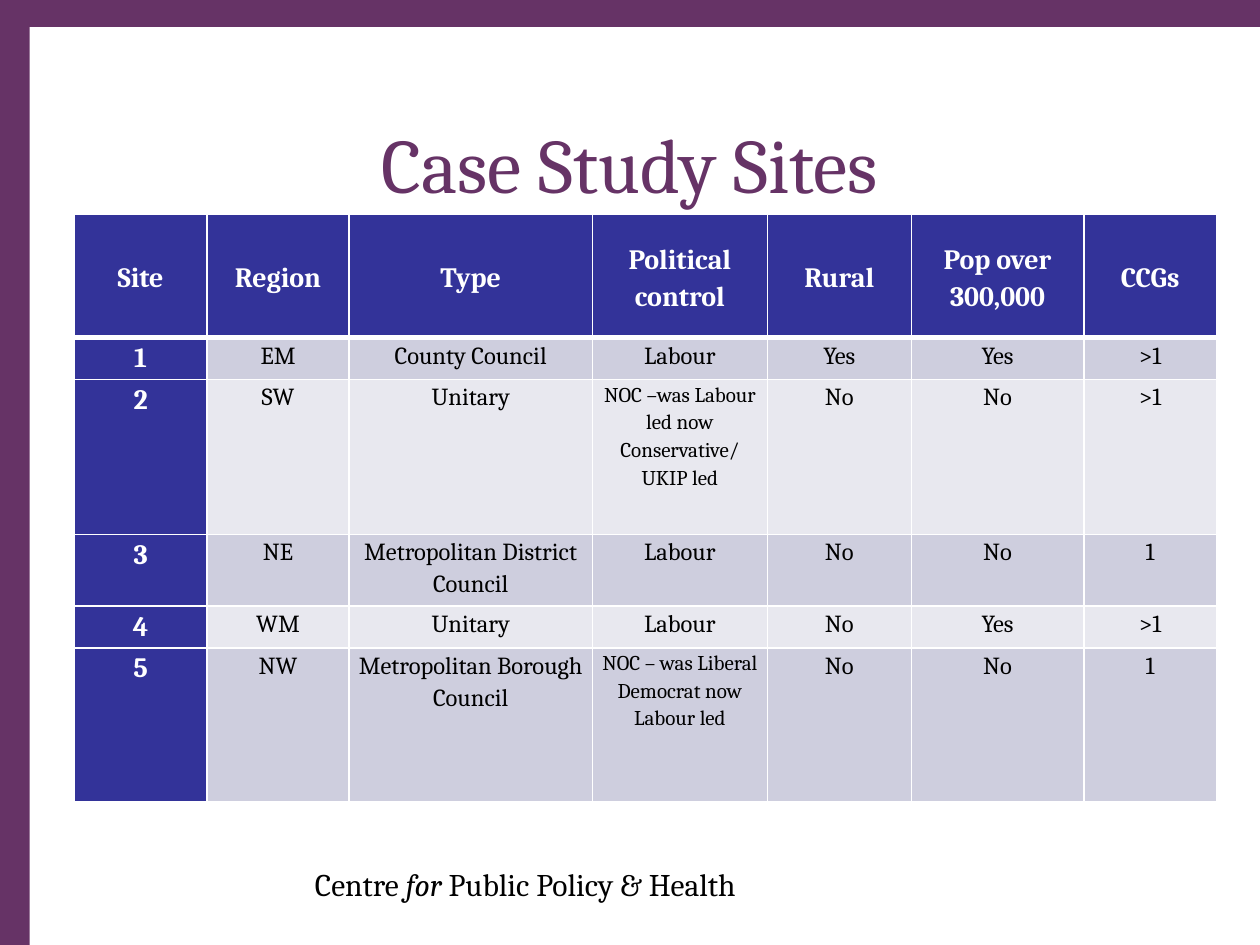
"""Build the Case Study Sites slide with its table of five sites."""
from lxml import etree
from pptx import Presentation
from pptx.dml.color import RGBColor
from pptx.enum.shapes import MSO_SHAPE
from pptx.enum.text import MSO_ANCHOR, PP_ALIGN
from pptx.oxml.ns import qn
from pptx.util import Cm, Pt

RECT = MSO_SHAPE.RECTANGLE
TOP, MIDDLE = MSO_ANCHOR.TOP, MSO_ANCHOR.MIDDLE
LEFT, CENTER = PP_ALIGN.LEFT, PP_ALIGN.CENTER
FONT = "Cambria"
PURPLE, BLUE, WHITE, BLACK = "663366", "333399", "FFFFFF", "000000"
BANDS = ("CECEDE", "E8E8EF")

TITLE = "Case Study Sites"
FOOTER = (("Centre ", False), ("for", True), (" Public Policy & Health", False))
HEADER = ("Site", "Region", "Type", "Political control", "Rural",
          "Pop over 300,000", "CCGs")
SITES = [
    ("1", "EM", "County Council", "Labour", "Yes", "Yes", ">1"),
    ("2", "SW", "Unitary",
     "NOC –was Labour led now Conservative/\nUKIP led", "No", "No", ">1"),
    ("3", "NE", "Metropolitan District Council", "Labour", "No", "No", "1"),
    ("4", "WM", "Unitary", "Labour", "No", "Yes", ">1"),
    ("5", "NW", "Metropolitan Borough Council",
     "NOC – was Liberal Democrat now Labour led", "No", "No", "1"),
]
COL_WIDTHS = (2.67, 2.87, 4.9, 3.53, 2.9, 3.48, 2.67)
ROW_HEIGHTS = (2.49, 0.84, 3.12, 1.45, 0.84, 3.1)


def rgb(color):
    return RGBColor.from_string(color)


def add_text(p, text, size=14, color=BLACK, bold=False, italic=False,
             align=CENTER, spacing=None):
    p.alignment = align
    p.line_spacing = spacing
    r = p.add_run()
    r.text = text
    f = r.font
    f.name, f.size, f.bold, f.italic = FONT, Pt(size), bold, italic
    f.color.rgb = rgb(color)


def add_rect(s, color, x, y, w, h):
    sp = s.shapes.add_shape(RECT, x, y, w, h)
    sp.shadow.inherit = False
    sp.fill.solid()
    sp.fill.fore_color.rgb = rgb(color)
    sp.line.fill.background()


def add_box(s, x, y, w, h):
    tf = s.shapes.add_textbox(Cm(x), Cm(y), Cm(w), Cm(h)).text_frame
    tf.word_wrap = True
    tf.vertical_anchor = MIDDLE
    return tf.paragraphs[0]


def set_borders(cell, **widths):
    tc_pr = cell._tc.get_or_add_tcPr()
    for side in "LRTB":
        ln = etree.SubElement(tc_pr, qn(f"a:ln{side}"),
                              w=str(Pt(widths.get(side, 1))))
        fill = etree.SubElement(ln, qn("a:solidFill"))
        etree.SubElement(fill, qn("a:srgbClr"), val=WHITE)


def fill_cell(cell, text, row, col):
    head = row == 0 or col == 0
    size = 16 if head else 12 if text.startswith("NOC") else 14
    set_borders(cell, T=3 if row == 1 else 1, B=3 if row == 0 else 1)
    cell.fill.solid()
    cell.fill.fore_color.rgb = rgb(BLUE if head else BANDS[(row - 1) % 2])
    cell.margin_left = cell.margin_right = Cm(0.18)
    cell.margin_top = cell.margin_bottom = 0
    cell.vertical_anchor = MIDDLE if row == 0 else TOP
    tf = cell.text_frame
    for i, line in enumerate(text.split("\n")):
        p = tf.add_paragraph() if i else tf.paragraphs[0]
        add_text(p, line, size=size, color=WHITE if head else BLACK,
                 bold=head, spacing=1.15)


def add_site_table(s, x, y):
    rows = [HEADER, *SITES]
    table = s.shapes.add_table(len(rows), len(HEADER), Cm(x), Cm(y),
                               Cm(sum(COL_WIDTHS)), Cm(sum(ROW_HEIGHTS))).table
    for column, width in zip(table.columns, COL_WIDTHS):
        column.width = Cm(width)
    for row, height in zip(table.rows, ROW_HEIGHTS):
        row.height = Cm(height)
    for i, texts in enumerate(rows):
        for j, text in enumerate(texts):
            fill_cell(table.cell(i, j), text, i, j)


def main():
    prs = Presentation()
    prs.slide_width, prs.slide_height = Cm(25.4), Cm(19.05)
    s = prs.slides.add_slide(prs.slide_layouts[6])
    w, h = prs.slide_width, prs.slide_height
    left, top = Cm(0.6), Cm(0.55)
    add_rect(s, PURPLE, 0, 0, w, h)
    add_rect(s, WHITE, left, top, w - left, h - top)
    p = add_box(s, 6.1, 16.4, 11, 2.82)
    for text, italic in FOOTER:
        add_text(p, text, size=18, italic=italic, align=LEFT)
    add_text(add_box(s, 1.9, 1.7, 21.6, 3.18), TITLE, size=44, color=PURPLE)
    add_site_table(s, 1.5, 4.32)
    prs.save("out.pptx")


if __name__ == "__main__":
    main()
